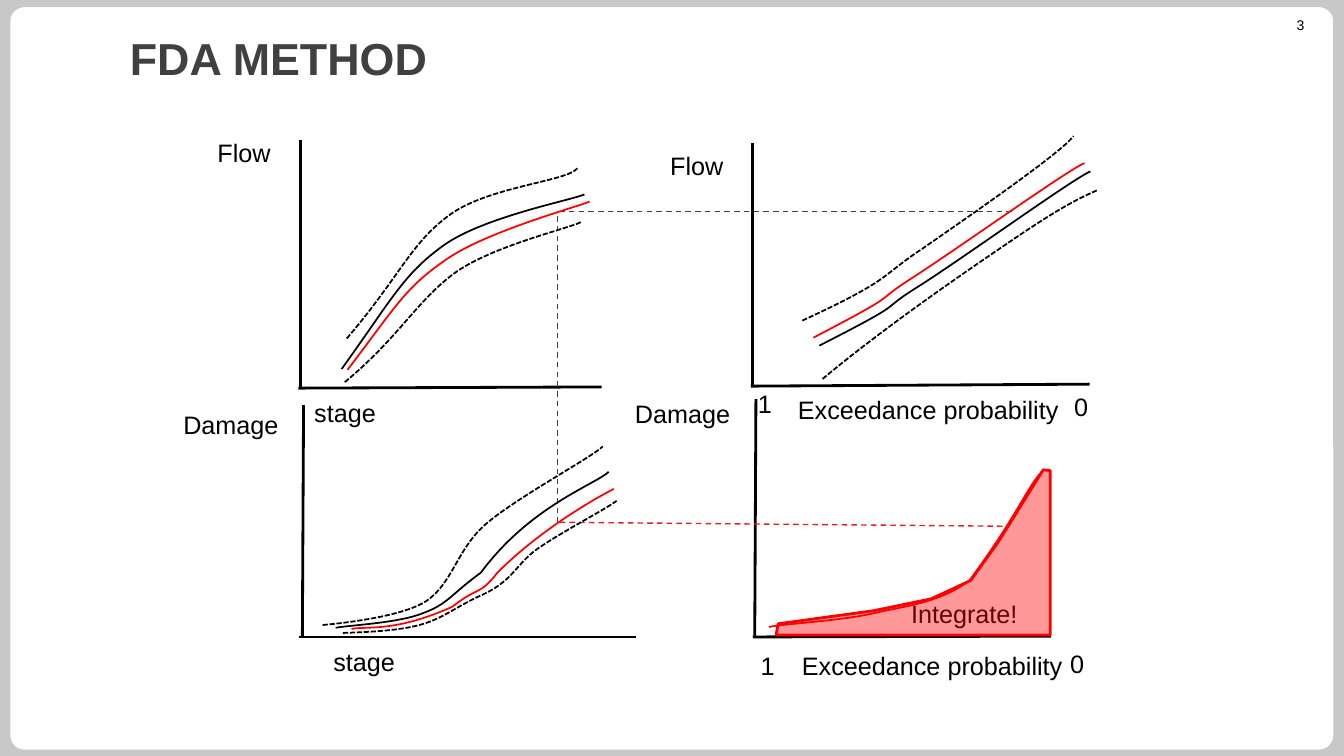
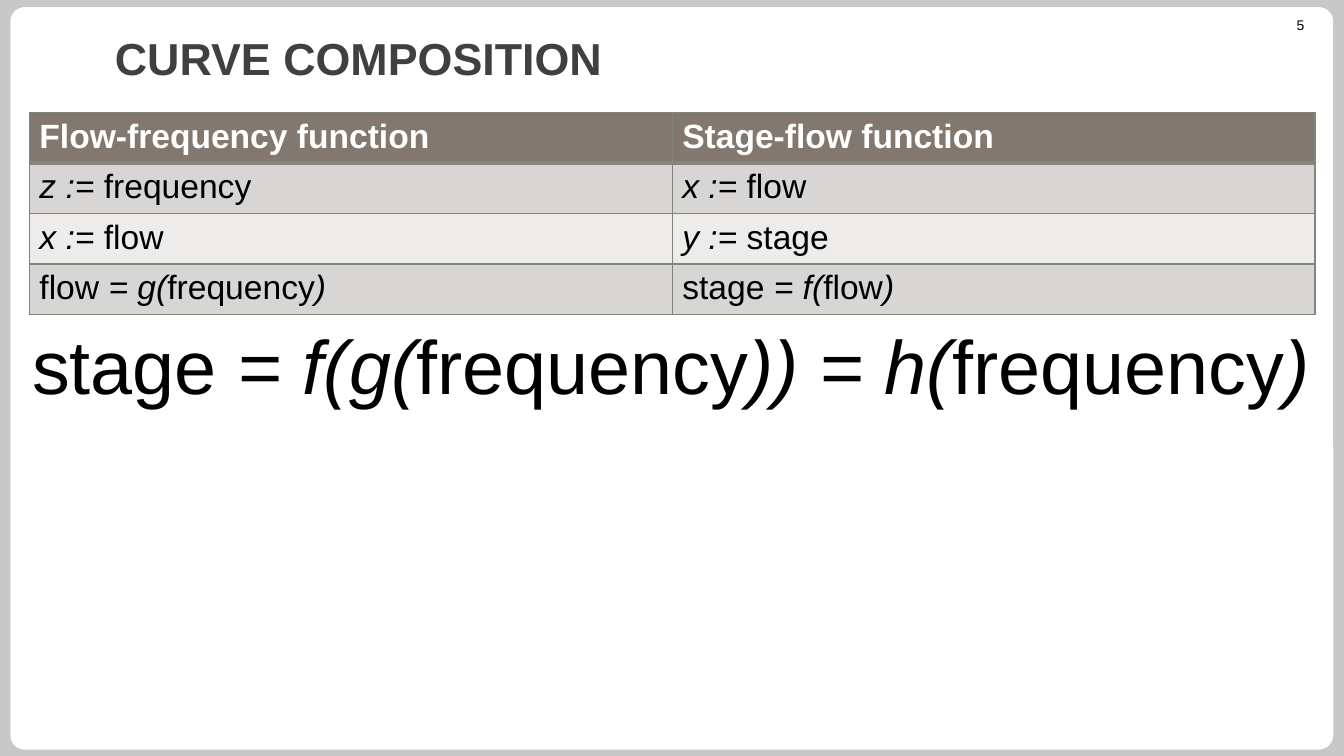
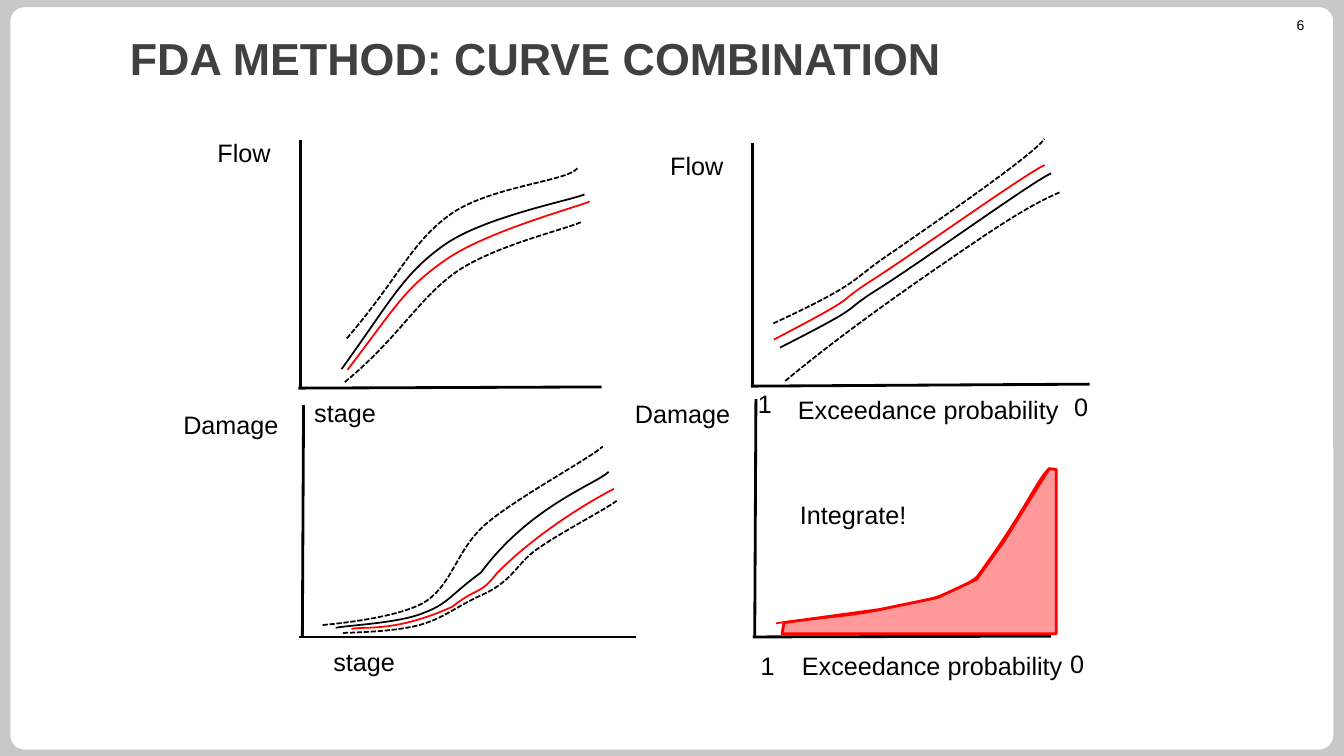
import lxml.etree
import pptx
import pptx.dml.color
import pptx.enum.dml
import pptx.enum.shapes
import pptx.enum.text
import pptx.oxml.ns
import pptx.util

Cm = pptx.util.Cm
Pt = pptx.util.Pt
qn = pptx.oxml.ns.qn
DASH = pptx.enum.dml.MSO_LINE.DASH
DOTS = pptx.enum.dml.MSO_LINE.SQUARE_DOT

BLACK = "000000"
WHITE = "FFFFFF"
GREY = "C8C8C8"
DARK = "404040"
RED = "FF0000"
CRIMSON = "DF1F2E"
BORDER = "83847A"


def hue(code):
    return pptx.dml.color.RGBColor.from_string(code)


def write(frame, text, size, color=BLACK, bold=False):
    """Fill a text frame; parts between asterisks are italic."""
    frame.word_wrap = True
    para = frame.paragraphs[0]
    for i, part in enumerate(text.split("*")):
        if part:
            run = para.add_run()
            run.text = part
            run.font.name = "Arial"
            run.font.size = Pt(size)
            run.font.bold = bold
            run.font.italic = i % 2 == 1
            run.font.color.rgb = hue(color)
    return para


deck = pptx.Presentation()
deck.slide_width = Cm(33.87)
deck.slide_height = Cm(19.05)

# Slides with title and number
layout = deck.slide_layouts[5]
layout.background.fill.solid()
layout.background.fill.fore_color.rgb = hue(GREY)

heads = [
    ("FDA METHOD", "3", 3.02),
    ("CURVE COMPOSITION", "5", 2.64),
    ("FDA METHOD: CURVE COMBINATION", "6", 3.02),
]
for text, number, left in heads:
    slide = deck.slides.add_slide(layout)
    title = slide.shapes.title
    title.left, title.top = Cm(left), Cm(0.36)
    title.width, title.height = Cm(29), Cm(2.18)
    title.text_frame.vertical_anchor = pptx.enum.text.MSO_ANCHOR.MIDDLE
    para = write(title.text_frame, text, 32, DARK, True)
    para.alignment = pptx.enum.text.PP_ALIGN.LEFT

    box = slide.shapes.add_textbox(Cm(30.99), Cm(0.41), Cm(2.13), Cm(0.43))
    box.text_frame.margin_top = box.text_frame.margin_bottom = 0
    para = write(box.text_frame, number, 10)
    para.alignment = pptx.enum.text.PP_ALIGN.RIGHT

# White panel, moved to the layout that all slides share
panel = deck.slides[0].shapes.add_shape(
    pptx.enum.shapes.MSO_SHAPE.ROUNDED_RECTANGLE,
    Cm(0.18), Cm(0.1), Cm(33.5), Cm(18.87))
panel.adjustments[0] = 0.023
panel.shadow.inherit = False
panel.fill.solid()
panel.fill.fore_color.rgb = hue(WHITE)
panel.line.color.rgb = hue(GREY)
panel.line.width = Pt(4.5)
layout.shapes._spTree.insert(2, panel._element)

# Straight lines: x1, y1, x2, y2
axes = [
    (18.97, 3.61, 18.97, 9.7), (27.46, 9.68, 18.92, 9.73),
    (7.57, 3.53, 7.57, 9.75), (15.16, 9.75, 7.52, 9.78),
    (7.65, 10.21, 7.62, 16.03), (16.03, 16.05, 7.54, 16.05),
    (19.05, 10.06, 19.02, 16.03), (26.49, 16.03, 18.97, 16.05),
]
guides = [
    (25.5, 5.33, 14.05, 5.33, DARK),
    (14.05, 13.18, 14.05, 5.33, DARK),
    (25.27, 13.26, 14.05, 13.16, CRIMSON),
]

# Labels: text, left, top, width
labels = [
    ("1", 18.85, 9.65, 1.14), ("0", 26.82, 9.73, 0.89),
    ("Exceedance probability", 19.86, 9.8, 7.34),
    ("1", 18.92, 16.26, 1.14), ("0", 26.72, 16.21, 0.89),
    ("Exceedance probability", 19.96, 16.26, 7.34),
    ("stage", 8.15, 16.15, 7.34), ("stage", 7.67, 9.88, 7.34),
    ("Damage", 4.37, 10.19, 7.34), ("Damage", 15.75, 9.91, 7.34),
    ("Flow", 5.23, 3.33, 7.34), ("Flow", 16.64, 3.66, 7.34),
]

# Bezier curves: colour, dash, shift on the last slide, start and controls
curves = [
    # Flow against probability
    (BLACK, DOTS, (-0.73, 0.07), [
        (20.22, 8.08), (22.53, 7.01), (22.12, 7.01), (23.27, 6.25),
        (24.41, 5.46), (26.8, 3.81), (27.05, 3.43)]),
    (BLACK, DOTS, (-0.94, 0.05), [
        (20.73, 9.55), (22.35, 8.2), (24.43, 6.78), (25.6, 5.99),
        (26.75, 5.21), (27.23, 4.98), (27.64, 4.8)]),
    (BLACK, None, (-0.99, 0.05), [
        (20.65, 8.71), (23.04, 7.49), (22.02, 7.92), (23.16, 7.21),
        (24.31, 6.48), (27.05, 4.5), (27.48, 4.32)]),
    (RED, None, (-1, 0.05), [
        (20.5, 8.51), (22.89, 7.26), (21.87, 7.72), (23.01, 6.99),
        (24.16, 6.25), (26.9, 4.29), (27.33, 4.11)]),
    # Flow against stage
    (BLACK, DOTS, (0, 0), [
        (8.74, 8.53), (10.06, 6.99), (10.34, 6.15), (11.3, 5.44),
        (12.27, 4.7), (14.33, 4.57), (14.55, 4.24)]),
    (BLACK, DOTS, (0, 0), [
        (8.69, 9.63), (10.08, 8.48), (10.54, 7.52), (11.53, 6.83),
        (12.52, 6.17), (14.3, 5.77), (14.66, 5.59)]),
    (BLACK, None, (0, 0), [
        (8.61, 9.3), (9.88, 7.54), (10.16, 6.91), (11.2, 6.17),
        (12.22, 5.46), (14.38, 5.05), (14.73, 4.9)]),
    (RED, None, (0, 0), [
        (8.76, 9.32), (10.03, 7.65), (10.21, 7.26), (11.23, 6.55),
        (12.24, 5.84), (14.5, 5.23), (14.86, 5.08)]),
    # Damage against stage
    (BLACK, DOTS, (0, 0), [
        (8.13, 15.75), (8.13, 15.75), (10.03, 15.6), (10.72, 15.16),
        (11.4, 14.73), (11.51, 13.84), (12.24, 13.21),
        (13, 12.55), (14.94, 11.51), (15.19, 11.25)]),
    (BLACK, DOTS, (0, 0), [
        (8.64, 15.95), (11, 15.88), (10.9, 15.6), (12.04, 15.04),
        (12.95, 14.66), (12.98, 14.22), (13.56, 13.82),
        (14.15, 13.41), (15.32, 12.8), (15.54, 12.62)]),
    (BLACK, None, (0, 0), [
        (8.46, 15.82), (8.84, 15.75), (10.08, 15.7), (10.69, 15.44),
        (11.3, 15.21), (11.35, 14.99), (12.12, 14.43),
        (13.36, 12.75), (15.04, 12.19), (15.34, 11.89)]),
    (RED, None, (0, 0), [
        (8.86, 15.85), (9.22, 15.77), (9.93, 15.95), (11.4, 15.29),
        (12.04, 14.78), (12.09, 15.01), (12.52, 14.45),
        (13.36, 13.59), (14.58, 12.78), (15.47, 12.32)]),
    # Damage against probability
    (RED, None, (0.18, -0.09), [
        (19.38, 15.8), (19.74, 15.72), (21.11, 15.65), (21.95, 15.47),
        (22.78, 15.27), (23.65, 15.21), (24.43, 14.63),
        (25.65, 12.98), (25.93, 12.19), (26.26, 11.89)]),
]
area = [
    (19.61, 15.72), (19.56, 16), (26.47, 16), (26.47, 11.86), (26.29, 11.84),
    (25.15, 13.67), (24.46, 14.63), (23.47, 15.09), (22.02, 15.39),
]

# Slides with the four graphs
graphs = [
    (deck.slides[0], 0, guides, ("Integrate!", 22.71, 14.96, 7.34)),
    (deck.slides[2], 1, [], ("Integrate!", 19.91, 12.45, 7.34)),
]
for slide, moved, extra, note in graphs:
    shapes = slide.shapes

    # Axes and guides
    lines = [(*ends, BLACK, 2, None) for ends in axes]
    lines += [(*ends, 1, DASH) for ends in extra]
    for x1, y1, x2, y2, color, width, dash in lines:
        line = shapes.add_connector(
            pptx.enum.shapes.MSO_CONNECTOR.STRAIGHT,
            Cm(x1), Cm(y1), Cm(x2), Cm(y2))
        line.line.color.rgb = hue(color)
        line.line.width = Pt(width)
        line.line.dash_style = dash
        lxml.etree.SubElement(line._element.spPr, qn("a:effectLst"))

    # Labels
    for text, left, top, width in labels + [note]:
        box = shapes.add_textbox(Cm(left), Cm(top), Cm(width), Cm(1.02))
        write(box.text_frame, text, 18)

    # Curves and the filled area
    outlines = [(*curve, 1.25, False) for curve in curves]
    outlines.append((RED, None, (0.15, -0.03), area, 2, True))
    for color, dash, (dx, dy), points, width, solid in outlines:
        spots = [(Cm(x + dx * moved), Cm(y + dy * moved)) for x, y in points]
        pen = shapes.build_freeform(*spots[0])
        pen.add_line_segments(spots[1:], close=solid)
        shape = pen.convert_to_shape()
        shape.shadow.inherit = False
        shape.line.color.rgb = hue(color)
        shape.line.width = Pt(width)
        shape.line.dash_style = dash
        if solid:
            shape.fill.solid()
            shape.fill.fore_color.rgb = hue(color)
            tint = shape._element.find(".//" + qn("a:srgbClr"))
            lxml.etree.SubElement(tint, qn("a:alpha"), val="40000")
        else:
            shape.fill.background()
            # Every three segments become one cubic curve
            track = shape._element.find(".//" + qn("a:path"))
            steps = track.findall(qn("a:lnTo"))
            for i in range(0, len(steps), 3):
                bend = lxml.etree.SubElement(track, qn("a:cubicBezTo"))
                for step in steps[i:i + 3]:
                    bend.append(step[0])
                    track.remove(step)

# Slide with the table
shapes = deck.slides[1].shapes
box = shapes.add_textbox(Cm(0.56), Cm(7.92), Cm(33.12), Cm(2.57))
write(box.text_frame, "stage* = f(g(*frequency*)) = h(*frequency*)*", 54)

rows = [
    ("Flow-frequency function", "Stage-flow function"),
    ("*z := *frequency", "*x := *flow"),
    ("*x := *flow", "*y := *stage"),
    ("flow* = g(*frequency*)*", "stage* = f(*flow*)*"),
]
fills = ["82786F", "D8D6D5", "EDECEB", "D8D6D5"]
table = shapes.add_table(
    4, 2, Cm(0.74), Cm(2.84), Cm(32.4), Cm(5.08)).table
for r, row in enumerate(rows):
    for c, text in enumerate(row):
        cell = table.cell(r, c)
        cell.fill.solid()
        cell.fill.fore_color.rgb = hue(fills[r])
        write(cell.text_frame, text, 24, WHITE if r == 0 else BLACK, r == 0)
        props = cell._tc.get_or_add_tcPr()
        for i, side in enumerate("LRTB"):
            thick = (r, side) in [(0, "B"), (1, "T")]
            edge = lxml.etree.Element(
                qn("a:ln" + side), w=str(Pt(3 if thick else 1)))
            ink = lxml.etree.SubElement(edge, qn("a:solidFill"))
            lxml.etree.SubElement(ink, qn("a:srgbClr"), val=BORDER)
            props.insert(i, edge)

deck.save("out.pptx")
